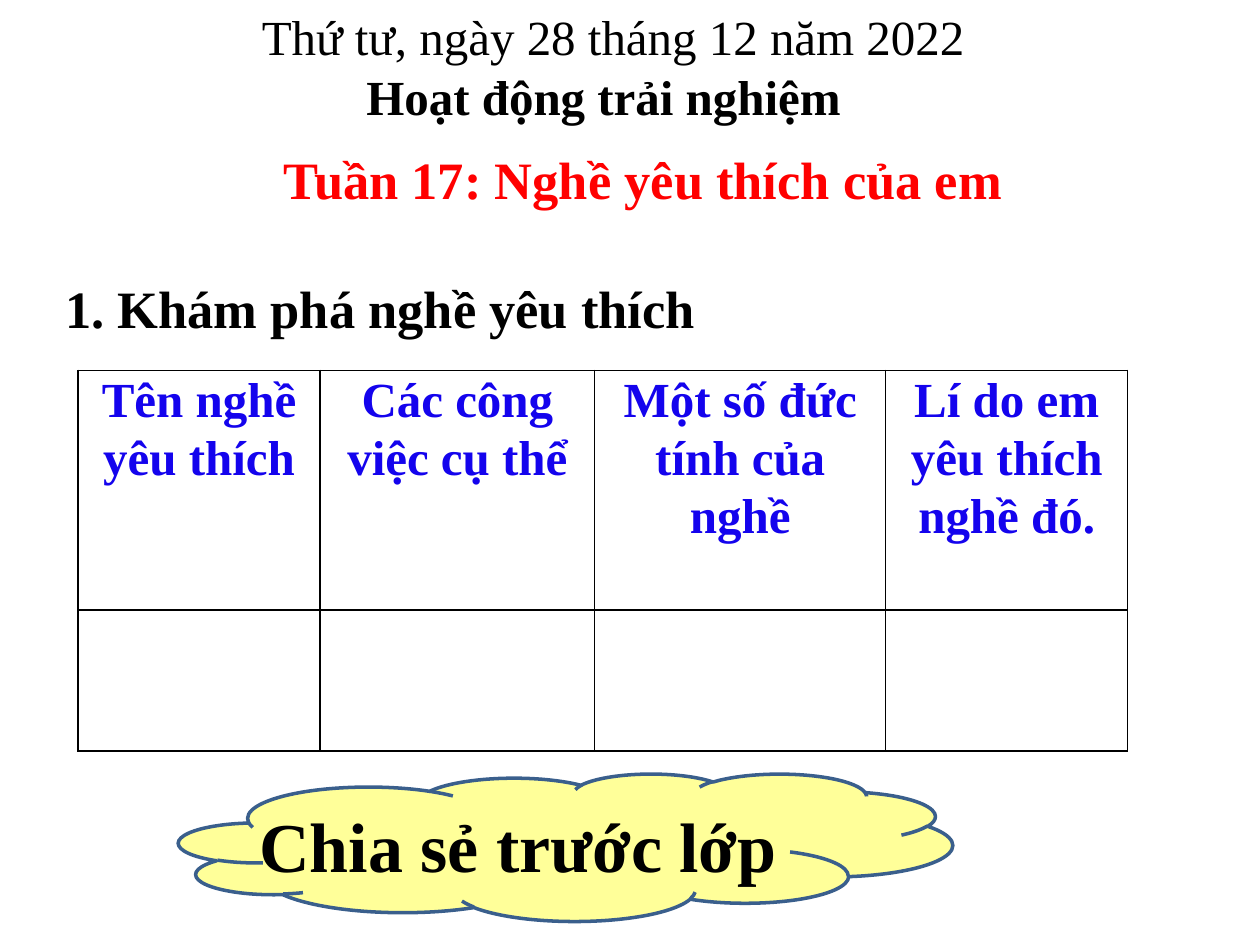
from dataclasses import dataclass

from lxml import etree
from pptx import Presentation
from pptx.dml.color import RGBColor
from pptx.enum.shapes import MSO_SHAPE
from pptx.enum.text import PP_ALIGN
from pptx.oxml.ns import qn
from pptx.util import Inches, Pt

CLOUD = MSO_SHAPE.CLOUD
LEFT, MID = PP_ALIGN.LEFT, PP_ALIGN.CENTER


@dataclass(frozen=True)
class Theme:
    face: str = "Times New Roman"
    black: str = "000000"
    red: str = "FF0000"
    blue: str = "1403ED"
    cream: str = "FFFF99"
    steel: str = "3A5F8C"
    body: int = 28
    head: int = 30
    big: int = 40


THEME = Theme()


@dataclass(frozen=True)
class Label:
    text: str
    box: tuple[float, float, float, float]
    size: int
    bold: bool = True
    color: str = THEME.black
    align: PP_ALIGN = LEFT


LABELS = [
    Label("1. Khám phá nghề yêu thích", (0.42, 2.14, 6.08, 0.61), THEME.head),
    Label("Hoạt động trải nghiệm", (0.25, 0.48, 9.08, 0.57), THEME.body, align=MID),
    Label("Thứ tư, ngày 28 tháng 12 năm 2022", (1.98, 0, 8.42, 0.57), THEME.body, bold=False),
    Label("Tuần 17: Nghề yêu thích của em", (1.98, 1.12, 6.25, 0.61), THEME.head,
          color=THEME.red, align=MID),
]
SHARE = Label("Chia sẻ trước lớp", (1.96, 6.32, 5.57, 0.99), THEME.big)

HEADS = ["Tên nghề yêu thích", "Các công việc cụ thể",
         "Một số đức tính của nghề", "Lí do em yêu thích nghề đó."]
WIDTHS = [1.92, 2.18, 2.31, 1.92]
ROWS = [1.9, 1.12]


def put(obj, values: dict) -> None:
    for name, value in values.items():
        setattr(obj, name, value)


def write(para, text: str, size: int, bold: bool, color: str, align: PP_ALIGN) -> None:
    para.alignment = align
    run = para.add_run()
    run.text = text
    put(run.font, {"name": THEME.face, "size": Pt(size), "bold": bold})
    run.font.color.rgb = RGBColor.from_string(color)


def add_label(slide, label: Label) -> None:
    frame = slide.shapes.add_textbox(*map(Inches, label.box)).text_frame
    frame.word_wrap = True
    write(frame.paragraphs[0], label.text, label.size, label.bold, label.color, label.align)


def edge(cell, color: str) -> None:
    props = cell._tc.get_or_add_tcPr()
    for side in ("lnL", "lnR", "lnT", "lnB"):
        line = etree.SubElement(props, qn(f"a:{side}"), w=str(Pt(1)))
        fill = etree.SubElement(line, qn("a:solidFill"))
        etree.SubElement(fill, qn("a:srgbClr"), val=color)


def add_grid(slide) -> None:
    box = map(Inches, (0.62, 2.94, sum(WIDTHS), sum(ROWS)))
    table = slide.shapes.add_table(len(ROWS), len(WIDTHS), *box).table
    put(table, {"first_row": False, "horz_banding": False})
    for col, width in zip(table.columns, WIDTHS):
        col.width = Inches(width)
    for row, height in zip(table.rows, ROWS):
        row.height = Inches(height)
    for cell in table.iter_cells():
        edge(cell, THEME.black)
        cell.fill.background()
    for cell, text in zip(table.rows[0].cells, HEADS):
        put(cell, {"margin_left": Inches(0.07), "margin_right": Inches(0.07),
                   "margin_top": 0, "margin_bottom": 0})
        para = cell.text_frame.paragraphs[0]
        para.line_spacing = 1.07
        write(para, text, THEME.body, True, THEME.blue, MID)


def add_cloud(slide) -> None:
    cloud = slide.shapes.add_shape(CLOUD, *map(Inches, (1.42, 6.14, 6.14, 1.17)))
    cloud.shadow.inherit = False
    cloud.fill.solid()
    cloud.fill.fore_color.rgb = RGBColor.from_string(THEME.cream)
    cloud.line.color.rgb = RGBColor.from_string(THEME.steel)
    cloud.line.width = Pt(2)


def main() -> None:
    deck = Presentation()
    put(deck, {"slide_width": Inches(10), "slide_height": Inches(7.5)})
    slide = deck.slides.add_slide(deck.slide_layouts[6])
    # Table of favourite jobs
    add_grid(slide)
    # Date, subject, title and section heading
    for label in LABELS:
        add_label(slide, label)
    # Cloud with the call to share
    add_cloud(slide)
    add_label(slide, SHARE)
    deck.save("out.pptx")


if __name__ == "__main__":
    main()
